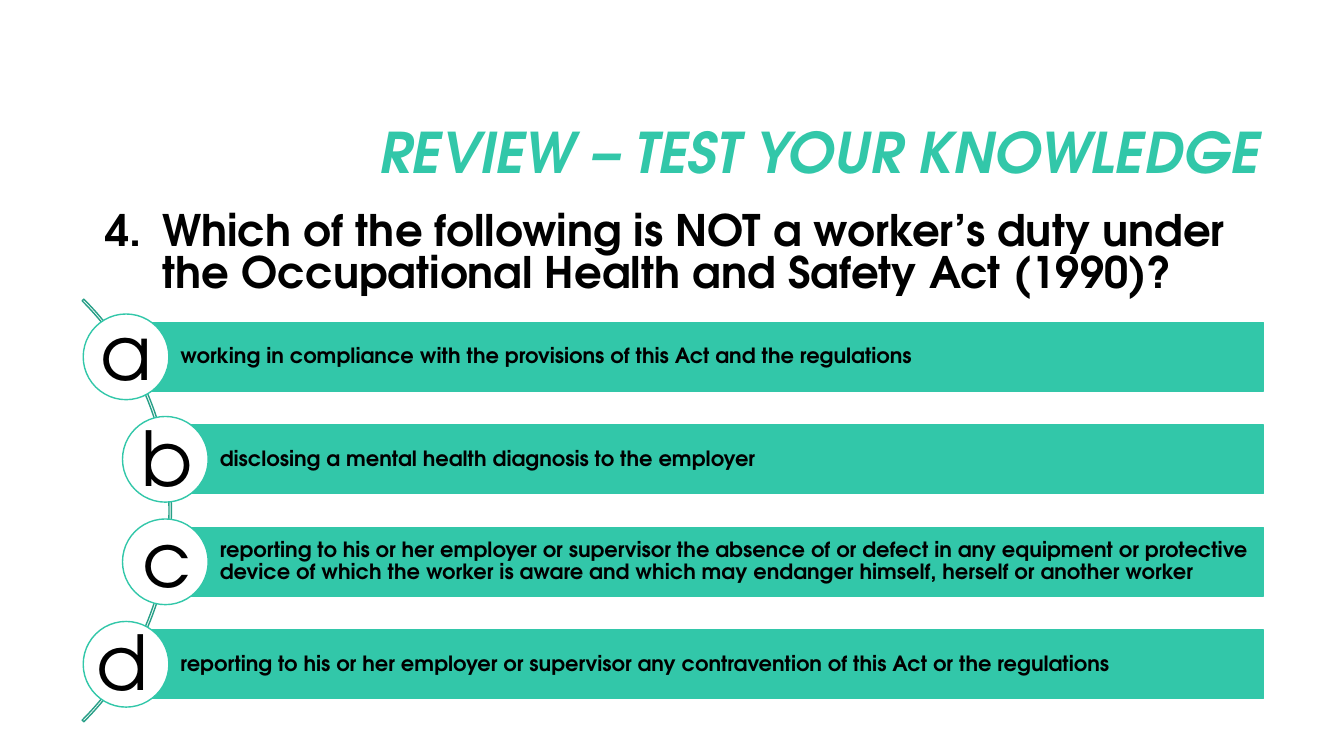
from lxml import etree
from pptx import Presentation
from pptx.dml.color import RGBColor
from pptx.enum.shapes import MSO_SHAPE
from pptx.enum.text import MSO_ANCHOR, PP_ALIGN
from pptx.oxml.ns import qn
from pptx.util import Inches, Pt

RECT, OVAL, ARC = MSO_SHAPE.RECTANGLE, MSO_SHAPE.OVAL, MSO_SHAPE.BLOCK_ARC
TOP, MIDDLE = MSO_ANCHOR.TOP, MSO_ANCHOR.MIDDLE
LEFT, CENTER, RIGHT = PP_ALIGN.LEFT, PP_ALIGN.CENTER, PP_ALIGN.RIGHT
TEAL = RGBColor(0x32, 0xC7, 0xA9)
DARK_TEAL = RGBColor(0x28, 0x9F, 0x87)
BLACK = RGBColor(0, 0, 0)
WHITE = RGBColor(255, 255, 255)
FONT = "TeX Gyre Adventor"

ANSWERS = [
    ("a", "working in compliance with the provisions of this Act and the regulations", 0, (0, -0.06)),
    ("b", "disclosing a mental health diagnosis to the employer", 0.39, (0.02, -0.02)),
    ("c", "reporting to his or her employer or supervisor the absence of or defect in any "
          "equipment or protective device of which the worker is aware and which may "
          "endanger himself, herself or another worker", 0.39, (0.02, -0.04)),
    ("d", "reporting to his or her employer or supervisor any contravention of this Act "
          "or the regulations", 0, (-0.04, -0.03)),
]


def write(shape, text, size, color=BLACK, bold=False, align=LEFT, anchor=TOP, spacing=1.0):
    tf = shape.text_frame
    tf.word_wrap = True
    tf.vertical_anchor = anchor
    p = tf.paragraphs[0]
    p.text = text
    p.alignment = align
    p.line_spacing = spacing
    p.font.name, p.font.size = FONT, Pt(size)
    p.font.bold, p.font.color.rgb = bold, color
    return p


def add_text(s, box, text, size, **style):
    return write(s.shapes.add_textbox(*map(Inches, box)), text, size, **style)


def add_outlined(s, kind, box, line, fill=None):
    sp = s.shapes.add_shape(kind, *map(Inches, box))
    sp.shadow.inherit = False
    if fill is None:
        sp.fill.background()
    else:
        sp.fill.solid()
        sp.fill.fore_color.rgb = fill
    sp.line.color.rgb = line
    sp.line.width = Pt(1)
    return sp


def add_title(s, box):
    p = add_text(s, box, "REVIEW – TEST YOUR KNOWLEDGE", 40, color=TEAL, bold=True,
                 align=RIGHT, anchor=MIDDLE, spacing=0.9)
    p.font.italic = True


def add_question(s, box, number):
    p = add_text(s, box, "Which of the following is NOT a worker’s duty under the "
                 "Occupational Health and Safety Act (1990)?", 31, bold=True, spacing=0.8)
    pPr = p._p.get_or_add_pPr()
    indent = Inches(0.56)
    pPr.set("marL", str(indent))
    pPr.set("indent", str(-indent))
    bullet = etree.Element(qn("a:buAutoNum"), type="arabicPeriod", startAt=str(number))
    pPr.find(qn("a:defRPr")).addprevious(bullet)


def add_answer(s, box, letter, text, nudge):
    x, y, w, h = box
    bar = add_outlined(s, RECT, box, TEAL, TEAL)
    tf = bar.text_frame
    tf.margin_left = Inches(0.54)
    tf.margin_right = tf.margin_top = tf.margin_bottom = Inches(0.04)
    write(bar, text, 15, bold=True, anchor=MIDDLE, spacing=0.9)

    d = h * 1.25
    add_outlined(s, OVAL, (x - d / 2, y + h / 2 - d / 2, d, d), TEAL, WHITE)
    dx, dy = nudge
    lw, lh = 0.72, 1.01
    add_text(s, (x - lw / 2 + dx, y + h / 2 - lh / 2 + dy, lw, lh), letter, 54, align=CENTER)


def add_answers(s, box):
    x, y, w, h = box
    bar_h = 0.68
    pitch = (h - bar_h) / (len(ANSWERS) - 1)
    d = 5.93
    arc = add_outlined(s, ARC, (x - 5.48, y + h / 2 - d / 2, d, d), DARK_TEAL)
    for i, value in enumerate((189, 27, 0.004)):
        arc.adjustments[i] = value
    for i, (letter, text, shift, nudge) in enumerate(ANSWERS):
        add_answer(s, (x + shift, y + i * pitch, w - shift, bar_h), letter, text, nudge)


def main():
    prs = Presentation()
    prs.slide_width, prs.slide_height = Inches(13.33), Inches(7.5)
    s = prs.slides.add_slide(prs.slide_layouts[6])
    add_title(s, (3.17, 0.84, 9.42, 1.41))
    add_question(s, (0.95, 2.07, 11.63, 0.97), 4)
    add_answers(s, (1.25, 3.2, 11.28, 3.73))
    prs.save("out.pptx")


if __name__ == "__main__":
    main()
